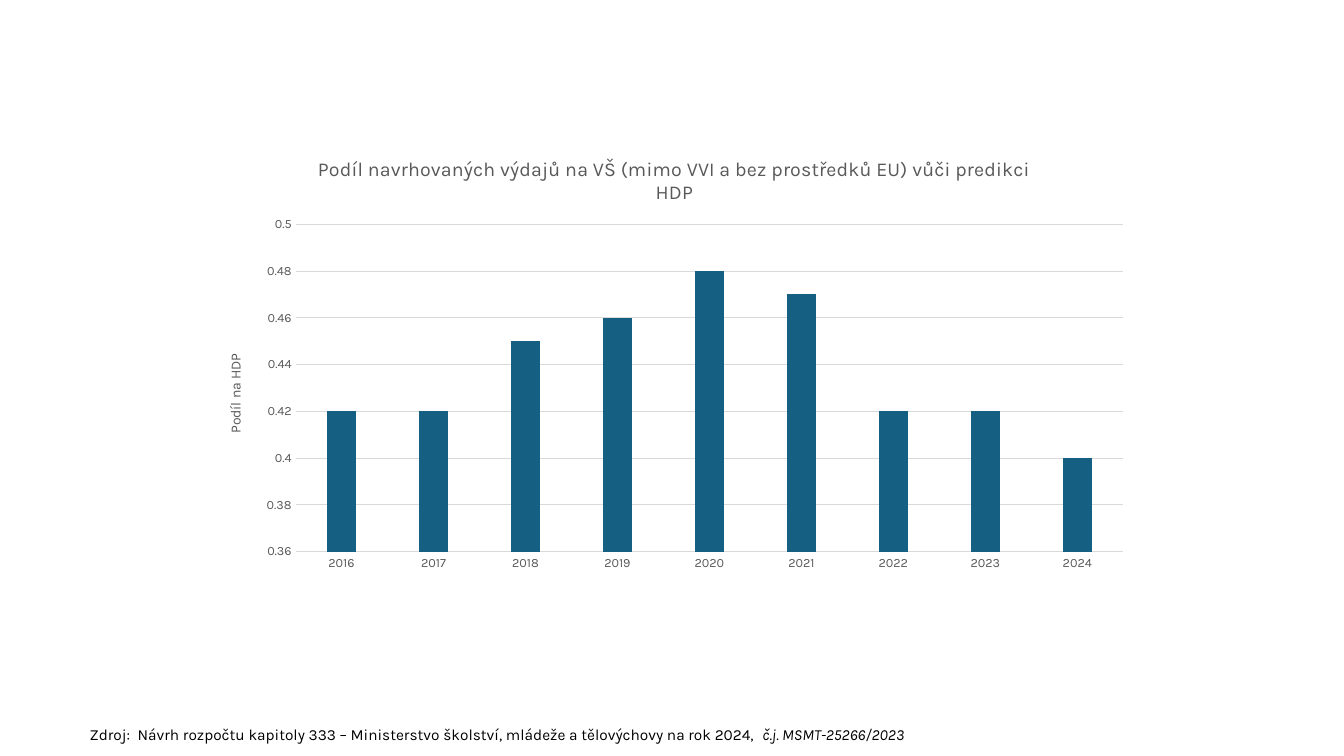
from lxml import etree
from pptx import Presentation
from pptx.chart.data import CategoryChartData
from pptx.dml.color import RGBColor
from pptx.enum.chart import XL_CHART_TYPE, XL_TICK_MARK
from pptx.enum.text import MSO_AUTO_SIZE
from pptx.oxml.ns import qn
from pptx.util import Cm, Pt

COLUMNS = XL_CHART_TYPE.COLUMN_CLUSTERED
NO_TICK = XL_TICK_MARK.NONE
FIT_SHAPE = MSO_AUTO_SIZE.SHAPE_TO_FIT_TEXT

COLORS = {"text": "000000", "muted": "595959", "grid": "D9D9D9", "bar": "156082"}
FONT = "Karla"

YEARS = [str(year) for year in range(2016, 2025)]
SHARES = [0.42, 0.42, 0.45, 0.46, 0.48, 0.47, 0.42, 0.42, 0.4]


class SlideBuilder:
    """Holds the style and the current slide."""

    def __init__(self, prs):
        self.s = prs.slides.add_slide(prs.slide_layouts[6])

    def color(self, name):
        return RGBColor.from_string(COLORS[name])

    def style(self, font, size, color="muted", italic=False):
        font.name = FONT
        font.size = Pt(size)
        font.bold = False
        font.italic = italic
        font.color.rgb = self.color(color)

    def line(self, line):
        line.color.rgb = self.color("grid")
        line.width = Pt(0.75)

    def title(self, owner, text, size):
        owner.has_title = True
        p = owner.chart_title if hasattr(owner, "chart_title") else owner.axis_title
        r = p.text_frame.paragraphs[0].add_run()
        r.text = text
        self.style(r.font, size)

    def text(self, box, runs, size):
        sp = self.s.shapes.add_textbox(*[Cm(v) for v in box])
        tf = sp.text_frame
        tf.word_wrap = True
        tf.auto_size = FIT_SHAPE
        p = tf.paragraphs[0]
        p.line_spacing = 0.9
        p.space_after = Pt(6)
        for text, italic in runs:
            r = p.add_run()
            r.text = text
            self.style(r.font, size, "text", italic)

    def column_chart(self, box, title, value_title, cats, values, scale, plot):
        data = CategoryChartData()
        data.categories = cats
        data.add_series("Series 1", values)
        frame = self.s.shapes.add_chart(COLUMNS, *[Cm(v) for v in box], data)
        chart = frame.chart
        chart.has_legend = False
        self.style(chart.font, 10, "text")
        self.title(chart, title, 14)
        chart.chart_title.include_in_layout = False

        # Columns
        bars = chart.plots[0]
        bars.vary_by_categories = False
        bars.gap_width = 219
        bars.overlap = -27
        fill = bars.series[0].format.fill
        fill.solid()
        fill.fore_color.rgb = self.color("bar")

        # Axes
        for axis in (chart.category_axis, chart.value_axis):
            axis.major_tick_mark = axis.minor_tick_mark = NO_TICK
            self.style(axis.tick_labels.font, 9)
        self.line(chart.category_axis.format.line)
        axis = chart.value_axis
        axis.minimum_scale, axis.maximum_scale, axis.major_unit = scale
        axis.format.line.fill.background()
        self.line(axis.major_gridlines.format.line)
        self.title(axis, value_title, 10)
        self.plot_layout(chart, plot)

    def plot_layout(self, chart, plot):
        area = chart.element.find(".//" + qn("c:plotArea"))
        layout = area.find(qn("c:layout"))
        if layout is None:
            layout = etree.Element(qn("c:layout"))
            area.insert(0, layout)
        manual = etree.SubElement(layout, qn("c:manualLayout"))
        settings = [("layoutTarget", "inner"), ("xMode", "edge"), ("yMode", "edge")]
        for tag, value in settings + list(zip("xywh", plot)):
            etree.SubElement(manual, qn("c:" + tag)).set("val", str(value))


def main():
    prs = Presentation()
    prs.slide_width, prs.slide_height = Cm(33.87), Cm(19.05)
    b = SlideBuilder(prs)

    # Spending chart
    b.column_chart(
        (5.21, 3.48, 23.57, 11.15),
        "Podíl navrhovaných výdajů na VŠ (mimo VVI a bez prostředků EU) vůči predikci HDP",
        "Podíl na HDP",
        YEARS,
        SHARES,
        scale=(0.36, 0.5, 0.02),
        plot=(0.095, 0.195, 0.885, 0.74),
    )

    # Source note
    b.text(
        (2.01, 18.19, 22.35, 0.69),
        [
            ("Zdroj:  Návrh rozpočtu kapitoly 333 – Ministerstvo školství, "
             "mládeže a tělovýchovy na rok 2024,  ", False),
            ("č.j. MSMT-25266/2023", True),
        ],
        11,
    )

    prs.save("out.pptx")


if __name__ == "__main__":
    main()
